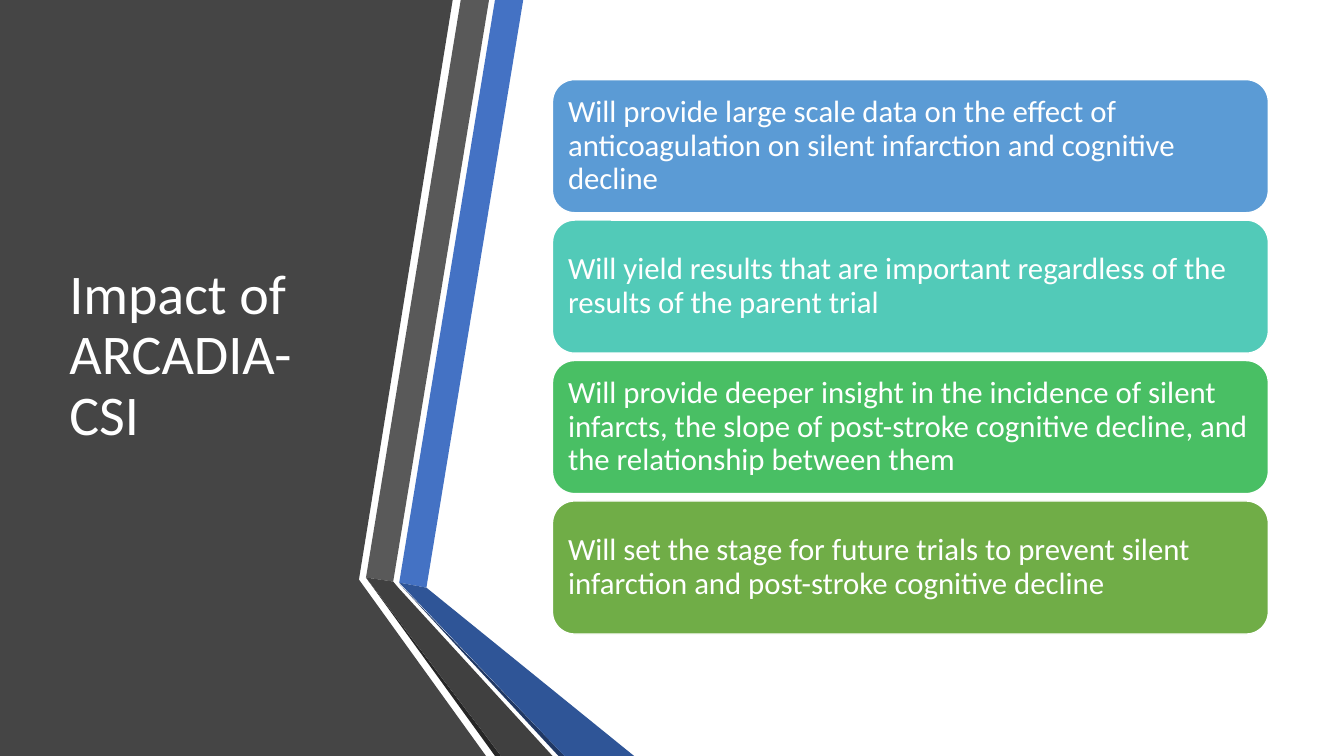
import pptx
import pptx.dml.color
import pptx.enum.shapes
import pptx.enum.text
import pptx.util

Inches = pptx.util.Inches
RGBColor = pptx.dml.color.RGBColor

WHITE = RGBColor(0xFF, 0xFF, 0xFF)
PANEL_GRAY = RGBColor(0x45, 0x45, 0x45)
BAND_BLUE = RGBColor(0x44, 0x72, 0xC4)
BAND_GRAY = RGBColor(0x59, 0x59, 0x59)
EDGE_BLACK = RGBColor(0x26, 0x26, 0x26)
EDGE_NAVY = RGBColor(0x20, 0x38, 0x64)
FOLD_BLUE = RGBColor(0x2F, 0x55, 0x97)
FOLD_GRAY = RGBColor(0x40, 0x40, 0x40)
CARD_BLUE = RGBColor(0x5B, 0x9B, 0xD5)
CARD_TEAL = RGBColor(0x52, 0xCA, 0xB8)
CARD_GREEN = RGBColor(0x49, 0xBF, 0x64)
CARD_OLIVE = RGBColor(0x70, 0xAD, 0x47)

# Side panel and folded ribbons, from back to front
RIBBONS = [
    (PANEL_GRAY, [(0, 0), (4.49, 0), (3.56, 5.75), (4.82, 7.5), (0, 7.5)]),
    (BAND_BLUE, [(3.96, 5.78), (4.23, 5.83), (5.19, 0), (4.91, 0)]),
    (BAND_GRAY, [(4.85, 0), (4.57, 0), (3.63, 5.73), (3.9, 5.77)]),
    (EDGE_BLACK, [(3.63, 5.73), (4.91, 7.5), (4.97, 7.5)]),
    (EDGE_NAVY, [(3.96, 5.79), (5.54, 7.5), (5.6, 7.5)]),
    (FOLD_BLUE, [(3.96, 5.78), (5.6, 7.5), (6.29, 7.5), (4.23, 5.83)]),
    (FOLD_GRAY, [(5.48, 7.5), (3.95, 5.83), (3.9, 5.77), (3.63, 5.73), (4.97, 7.5)]),
]

CARDS = [
    (CARD_BLUE, "Will provide large scale data on the effect of anticoagulation "
                "on silent infarction and cognitive decline"),
    (CARD_TEAL, "Will yield results that are important regardless of the results "
                "of the parent trial"),
    (CARD_GREEN, "Will provide deeper insight in the incidence of silent infarcts, "
                 "the slope of post-stroke cognitive decline, and the relationship "
                 "between them"),
    (CARD_OLIVE, "Will set the stage for future trials to prevent silent infarction "
                 "and post-stroke cognitive decline"),
]
CARD_TOP, CARD_HEIGHT, CARD_BOTTOM = 0.79, 1.32, 6.29
CARD_PITCH = (CARD_BOTTOM - CARD_HEIGHT - CARD_TOP) / (len(CARDS) - 1)


class SlideBuilder:
    """Holds the text style and the current slide."""

    font_name = "Calibri"
    line_spacing = 0.9

    def __init__(self, slide):
        self.slide = slide

    def set_text(self, shape, text, size, margin):
        frame = shape.text_frame
        frame_format = {
            "word_wrap": True,
            "vertical_anchor": pptx.enum.text.MSO_ANCHOR.MIDDLE,
            "margin_left": Inches(margin),
            "margin_right": Inches(margin),
        }
        for name, value in frame_format.items():
            setattr(frame, name, value)
        paragraph = frame.paragraphs[0]
        paragraph.alignment = pptx.enum.text.PP_ALIGN.LEFT
        paragraph.line_spacing = self.line_spacing
        run = paragraph.add_run()
        run.text = text
        font_format = {"name": self.font_name, "size": pptx.util.Pt(size)}
        for name, value in font_format.items():
            setattr(run.font, name, value)
        run.font.color.rgb = WHITE

    def paint(self, shape, color):
        shape.shadow.inherit = False
        shape.fill.solid()
        shape.fill.fore_color.rgb = color

    def ribbon(self, color, points):
        corners = [(Inches(x), Inches(y)) for x, y in points]
        builder = self.slide.shapes.build_freeform(*corners[0])
        builder.add_line_segments(corners[1:], close=True)
        shape = builder.convert_to_shape()
        self.paint(shape, color)
        shape.line.fill.background()

    def title(self, text, left, top, width, height):
        box = self.slide.shapes.add_textbox(
            Inches(left), Inches(top), Inches(width), Inches(height))
        self.set_text(box, text, size=40, margin=0.1)

    def card(self, color, text, left, top, width, height):
        shape = self.slide.shapes.add_shape(
            pptx.enum.shapes.MSO_SHAPE.ROUNDED_RECTANGLE,
            Inches(left), Inches(top), Inches(width), Inches(height))
        self.paint(shape, color)
        shape.line.color.rgb = WHITE
        shape.line.width = pptx.util.Pt(1)
        self.set_text(shape, text, size=22, margin=0.09)


def main():
    presentation = pptx.Presentation()
    presentation.slide_width = Inches(13.33)
    presentation.slide_height = Inches(7.5)
    slide = presentation.slides.add_slide(presentation.slide_layouts[6])
    builder = SlideBuilder(slide)

    # Left panel with ribbons and title
    for color, points in RIBBONS:
        builder.ribbon(color, points)
    builder.title("Impact of ARCADIA-CSI", 0.59, 0.75, 3.04, 5.58)

    # Stack of impact cards
    for index, (color, text) in enumerate(CARDS):
        top = CARD_TOP + index * CARD_PITCH
        builder.card(color, text, 5.48, top, 7.1, CARD_HEIGHT)

    presentation.save("out.pptx")


if __name__ == "__main__":
    main()
